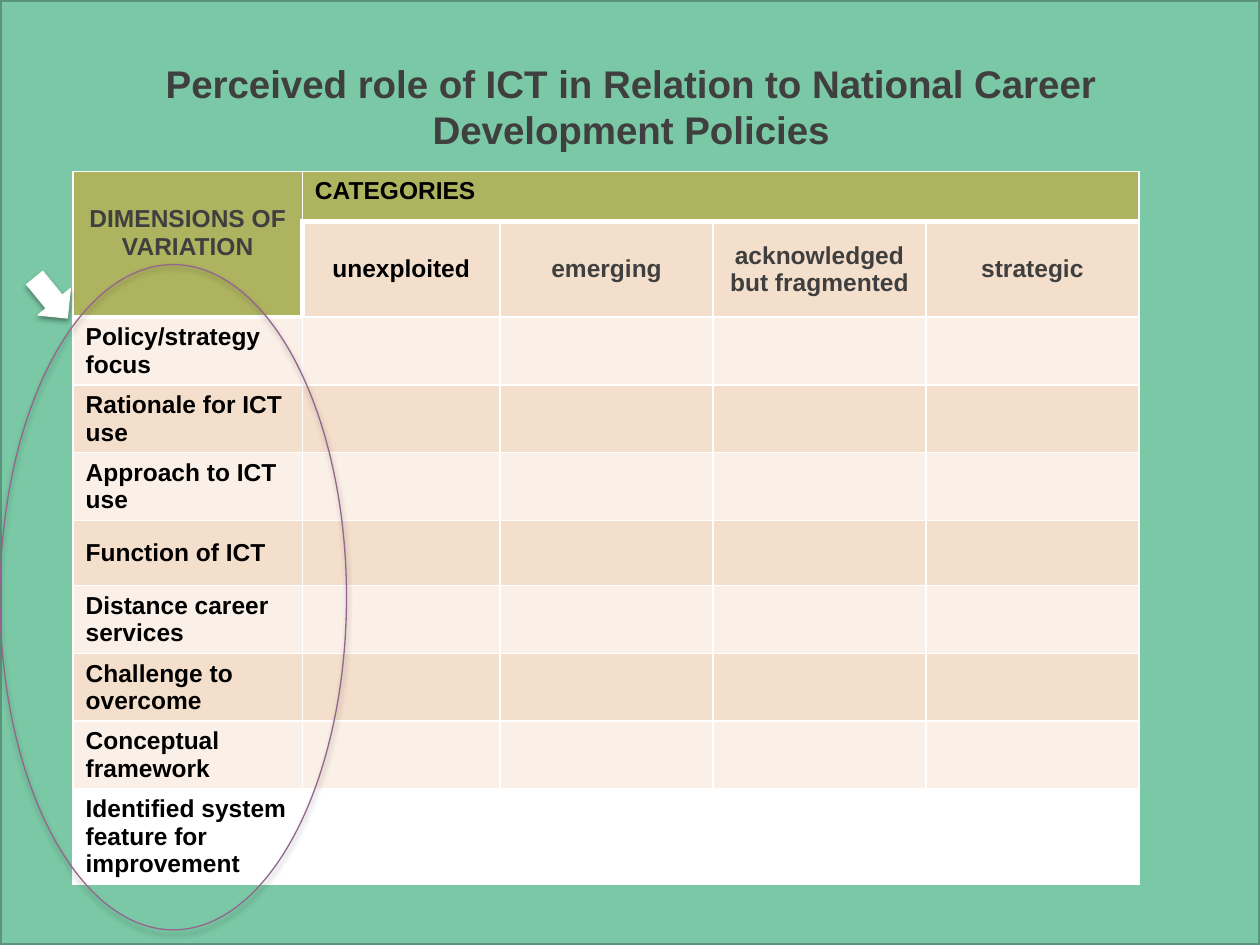
from dataclasses import dataclass
from typing import Optional

import lxml.etree
import pptx
import pptx.dml.color
import pptx.enum.shapes
import pptx.enum.text
import pptx.oxml.ns
import pptx.util

UNIT = pptx.util.Inches(0.1)
GRID_COLUMNS, GRID_ROWS = 100, 75
SHAPES = pptx.enum.shapes.MSO_SHAPE
ANCHOR = pptx.enum.text.MSO_ANCHOR
ALIGN = pptx.enum.text.PP_ALIGN


@dataclass(frozen=True)
class Theme:
    background: str = "7AC8A5"
    frame: str = "5A947A"
    header: str = "E29F1D"
    header_opacity: int = 50
    band_dark: str = "F4DFCC"
    band_light: str = "FAF0E7"
    white: str = "FFFFFF"
    black: str = "000000"
    grey: str = "3F3F3F"
    ring: str = "94658D"
    arrow_line: str = "F9F9F9"
    font: str = "Arial"
    title_size: float = 22
    table_size: float = 14
    thin: float = 1
    thick: float = 3


@dataclass(frozen=True)
class Box:
    column: float
    row: float
    columns: float
    rows: float

    def lengths(self) -> tuple:
        return tuple(
            grid_length(value)
            for value in (self.column, self.row, self.columns, self.rows)
        )


@dataclass(frozen=True)
class Shadow:
    opacity: int
    blur: float
    distance: float


@dataclass(frozen=True)
class Figure:
    kind: int
    box: Box
    line: str
    line_width: float
    fill: Optional[str] = None
    rotation: float = 0
    shadow: Optional[Shadow] = None


THEME = Theme()
FRAME = Figure(SHAPES.RECTANGLE, Box(0, 0, GRID_COLUMNS, GRID_ROWS),
               THEME.frame, 2, THEME.background)
HIGHLIGHTS = (
    Figure(SHAPES.OVAL, Box(0, 21, 27.5, 52.8), THEME.ring, 0.75,
           shadow=Shadow(35, 3.1, 1.8)),
    Figure(SHAPES.RIGHT_ARROW, Box(2, 22, 4.1, 3.3), THEME.arrow_line, 0.75,
           THEME.white, 50.8, Shadow(38, 3.1, 1.6)),
)
TITLE = "Perceived role of ICT in Relation to National Career Development Policies"
TITLE_BOX = Box(6.1, 4.1, 88, 11.4)
TABLE_BOX = Box(5.8, 13.6, 84.6, 51.6)
CATEGORIES = ("unexploited", "emerging", "acknowledged but fragmented", "strategic")
DIMENSIONS = (
    "Policy/strategy focus",
    "Rationale for ICT use",
    "Approach to ICT use",
    "Function of ICT",
    "Distance career services",
    "Challenge to overcome",
    "Conceptual framework",
    "Identified system feature for improvement",
)
COLUMN_WIDTHS = (18.2, 15.7) + (16.9,) * 3
ROW_HEIGHTS = (4, 6) + (5.2,) * len(DIMENSIONS)
LINE_ROWS = 2.2


def grid_length(units: float) -> int:
    return round(units * UNIT)


def color(value: str) -> pptx.dml.color.RGBColor:
    return pptx.dml.color.RGBColor.from_string(value)


def child(parent, tag: str, **attributes):
    element = lxml.etree.SubElement(parent, pptx.oxml.ns.qn(tag))
    for name, value in attributes.items():
        element.set(name, str(value))
    return element


def add_run(paragraph, text: str, size: float, text_color: str) -> None:
    run = paragraph.add_run()
    run.text = text
    run.font.name = THEME.font
    run.font.size = pptx.util.Pt(size)
    run.font.bold = True
    run.font.color.rgb = color(text_color)


def add_shadow(shape, shadow: Shadow) -> None:
    effects = shape._element.spPr.find(pptx.oxml.ns.qn("a:effectLst"))
    outer = child(effects, "a:outerShdw", blurRad=pptx.util.Pt(shadow.blur),
                  dist=pptx.util.Pt(shadow.distance), dir=90 * 60000, rotWithShape=0)
    shade = child(outer, "a:srgbClr", val=THEME.black)
    child(shade, "a:alpha", val=shadow.opacity * 1000)


def draw_figure(slide, figure: Figure) -> None:
    shape = slide.shapes.add_shape(figure.kind, *figure.box.lengths())
    shape.rotation = figure.rotation
    if figure.fill:
        shape.fill.solid()
        shape.fill.fore_color.rgb = color(figure.fill)
    else:
        shape.fill.background()
    shape.line.color.rgb = color(figure.line)
    shape.line.width = pptx.util.Pt(figure.line_width)
    shape.shadow.inherit = False
    if figure.shadow:
        add_shadow(shape, figure.shadow)


def border_width(row: int, column: int, side: str) -> float:
    in_corner = row < 2 and column == 0
    thick = {
        "L": row == 1 and column == 1,
        "R": False,
        "T": (row == 1 and column > 0) or (row == 2 and column == 0),
        "B": in_corner or row == 0,
    }
    return THEME.thick if thick[side] else THEME.thin


def fill_of(row: int, column: int) -> str:
    if row == 0 or (row == 1 and column == 0):
        return THEME.header
    if row == len(ROW_HEIGHTS) - 1:
        return THEME.white
    return THEME.band_dark if row % 2 else THEME.band_light


def style_cell(cell, row: int, column: int) -> None:
    properties = cell._tc.get_or_add_tcPr()
    for side in "LRTB":
        width = pptx.util.Pt(border_width(row, column, side))
        border = child(properties, f"a:ln{side}", w=width)
        child(child(border, "a:solidFill"), "a:srgbClr", val=THEME.white)
    fill = fill_of(row, column)
    cell.fill.solid()
    cell.fill.fore_color.rgb = color(fill)
    if fill == THEME.header:
        shade = properties.find(pptx.oxml.ns.qn("a:solidFill"))[0]
        child(shade, "a:alpha", val=THEME.header_opacity * 1000)


def write_cell(cell, text: str, text_color: str = THEME.black,
               align=ALIGN.LEFT, anchor=ANCHOR.MIDDLE) -> None:
    cell.vertical_anchor = anchor
    paragraph = cell.text_frame.paragraphs[0]
    paragraph.alignment = align
    add_run(paragraph, text, THEME.table_size, text_color)


def draw_table(slide) -> None:
    table = slide.shapes.add_table(
        len(ROW_HEIGHTS), len(COLUMN_WIDTHS), *TABLE_BOX.lengths()).table
    table.first_row = table.horz_banding = False
    for column, width in zip(table.columns, COLUMN_WIDTHS):
        column.width = grid_length(width)
    for row, height in zip(table.rows, ROW_HEIGHTS):
        row.height = grid_length(height)
    for row in range(len(ROW_HEIGHTS)):
        for column in range(len(COLUMN_WIDTHS)):
            style_cell(table.cell(row, column), row, column)

    corner = table.cell(0, 0)
    corner.merge(table.cell(1, 0))
    corner.margin_top = grid_length(0.5 + LINE_ROWS)
    write_cell(corner, "DIMENSIONS OF VARIATION", THEME.grey, ALIGN.CENTER, ANCHOR.TOP)
    table.cell(0, 1).merge(table.cell(0, len(CATEGORIES)))
    write_cell(table.cell(0, 1), "CATEGORIES", anchor=ANCHOR.TOP)
    for column, category in enumerate(CATEGORIES, 1):
        text_color = THEME.black if column == 1 else THEME.grey
        write_cell(table.cell(1, column), category, text_color, ALIGN.CENTER)
    for row, dimension in enumerate(DIMENSIONS, 2):
        write_cell(table.cell(row, 0), dimension)


def draw_title(slide) -> None:
    frame = slide.shapes.add_textbox(*TITLE_BOX.lengths()).text_frame
    frame.word_wrap = True
    frame.vertical_anchor = ANCHOR.MIDDLE
    frame.margin_bottom = grid_length(3.3)
    paragraph = frame.paragraphs[0]
    paragraph.alignment = ALIGN.CENTER
    add_run(paragraph, TITLE, THEME.title_size, THEME.grey)


def main() -> None:
    presentation = pptx.Presentation()
    presentation.slide_width = grid_length(GRID_COLUMNS)
    presentation.slide_height = grid_length(GRID_ROWS)
    slide = presentation.slides.add_slide(presentation.slide_layouts[6])
    draw_figure(slide, FRAME)
    draw_table(slide)
    for figure in HIGHLIGHTS:
        draw_figure(slide, figure)
    draw_title(slide)
    presentation.save("out.pptx")


if __name__ == "__main__":
    main()
